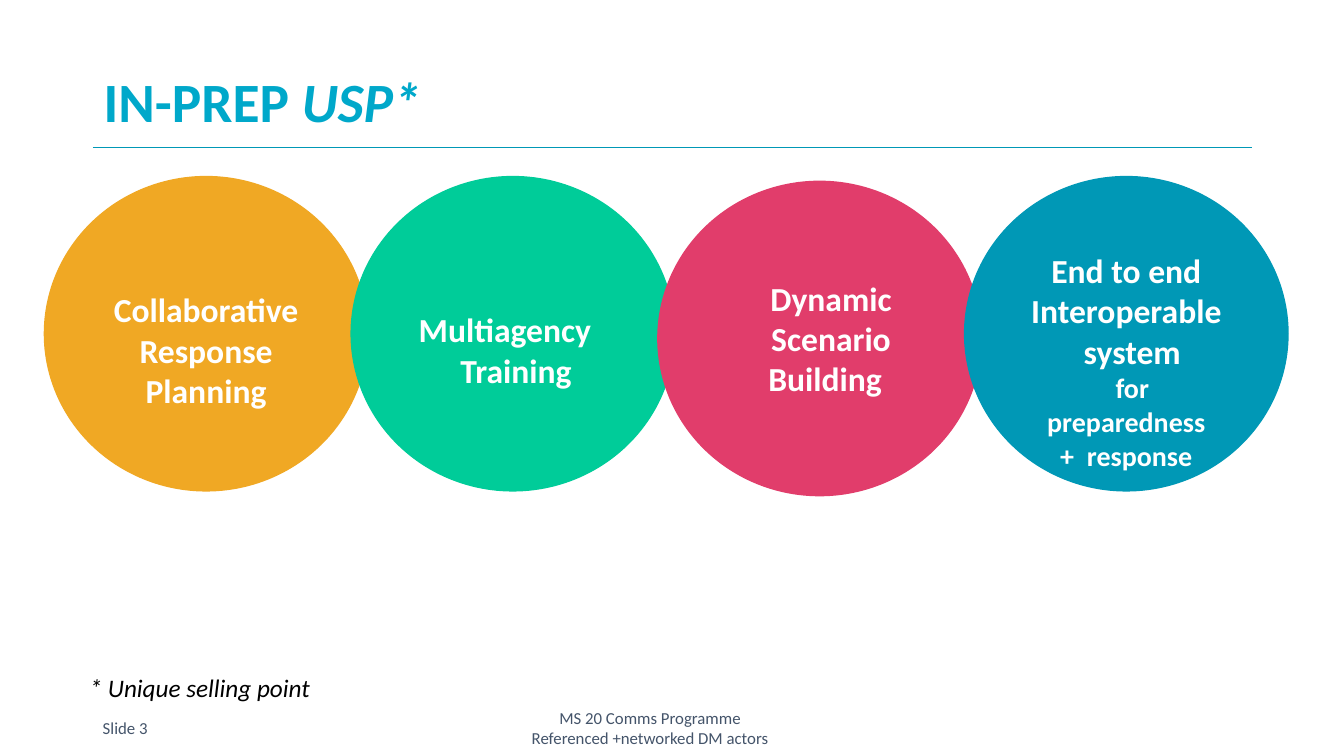
from dataclasses import dataclass

from lxml import etree
from pptx import Presentation
from pptx import util as u
from pptx.dml.color import RGBColor
from pptx.enum import shapes, text
from pptx.oxml.ns import qn


@dataclass(frozen=True)
class Theme:
    font: str = "Calibri"
    title: str = "00A8CA"
    rule: str = "0098B6"
    footer: str = "44546A"
    black: str = "000000"
    white: str = "FFFFFF"
    orange: str = "F0A824"
    green: str = "00CC99"
    pink: str = "E13D6B"
    title_size: float = 39.6
    circle_size: float = 24
    detail_size: float = 20
    note_size: float = 18
    footer_size: float = 12


T = Theme()


@dataclass(frozen=True)
class Line:
    words: str
    size: float = T.circle_size
    indent: float = 0


@dataclass(frozen=True)
class Circle:
    color: str
    lines: tuple[Line, ...]
    text_top: float
    top: float = 4.45
    left_inset: float = 0
    right_inset: float = 0


@dataclass(frozen=True)
class Label:
    lines: tuple[str, ...]
    left: float
    top: float
    width: float
    size: float = T.footer_size
    color: str = T.footer
    align: text.PP_ALIGN = text.PP_ALIGN.LEFT
    italic: bool = False
    wrap: bool = True


CIRCLE_LEFT, CIRCLE_PITCH = 1.12, 7.73
CIRCLE_WIDTH, CIRCLE_HEIGHT = 8.15, 7.92
LABEL_HEIGHT = 1.02

CIRCLES = (
    Circle(T.orange, (Line("Collaborative Response Planning"),), 1.68),
    Circle(T.green, (Line("Multiagency"), Line("Training", indent=0.56)), 2.18,
           right_inset=0.4),
    Circle(T.pink, (Line("Dynamic", indent=0.3), Line("Scenario", indent=0.3),
                    Line("Building")), 1.27, top=4.57, left_inset=0.28),
    Circle(T.rule, (Line("End to end"), Line("Interoperable"),
                    Line("system", indent=0.3),
                    Line("for", T.detail_size, 0.3),
                    Line("preparedness", T.detail_size),
                    Line("+  response", T.detail_size)), 0.69),
)

LABELS = (
    Label(("MS 20 Comms Programme", "Referenced +networked DM actors"),
          10.67, 17.83, 11.43, align=text.PP_ALIGN.CENTER),
    Label(("Slide 3",), 2.34, 17.83, 2.03),
    Label(("* Unique selling point",), 2.01, 16.81, 6.35, T.note_size, T.black,
          italic=True, wrap=False),
)


def style(font, size: float, color: str, bold: bool = False,
          italic: bool = False) -> None:
    font.name = T.font
    font.size = u.Pt(size)
    font.bold = bold
    font.italic = italic
    font.color.rgb = RGBColor.from_string(color)


def add_title(s) -> None:
    sp = s.shapes.title
    sp.left, sp.top, sp.width, sp.height = map(u.Cm, (2.36, 1.88, 29.21, 1.78))
    tf = sp.text_frame
    tf.vertical_anchor = text.MSO_ANCHOR.TOP
    tf.margin_top = tf.margin_bottom = 0
    p = tf.paragraphs[0]
    p.alignment = text.PP_ALIGN.LEFT
    p.line_spacing = 0.9
    for words, italic in (("IN-PREP ", False), ("USP*", True)):
        r = p.add_run()
        r.text = words
        style(r.font, T.title_size, T.title, True, italic)


def add_rule(s) -> None:
    line = s.shapes.add_connector(shapes.MSO_CONNECTOR.STRAIGHT, u.Cm(2.34),
                                  u.Cm(3.71), u.Cm(31.55), u.Cm(3.71))
    line.line.color.rgb = RGBColor.from_string(T.rule)
    line.line.width = u.Pt(1)
    etree.SubElement(line._element.spPr, qn("a:effectLst"))


def add_circle(s, index: int, circle: Circle) -> None:
    sp = s.shapes.add_shape(
        shapes.MSO_SHAPE.OVAL, u.Cm(CIRCLE_LEFT + index * CIRCLE_PITCH),
        u.Cm(circle.top), u.Cm(CIRCLE_WIDTH), u.Cm(CIRCLE_HEIGHT))
    sp.shadow.inherit = False
    sp.fill.solid()
    sp.fill.fore_color.rgb = RGBColor.from_string(circle.color)
    sp.line.color.rgb = RGBColor.from_string(circle.color)
    sp.line.width = u.Pt(1)
    tf = sp.text_frame
    tf.word_wrap = True
    tf.vertical_anchor = text.MSO_ANCHOR.TOP
    tf.margin_left = u.Cm(circle.left_inset)
    tf.margin_right = u.Cm(circle.right_inset)
    tf.margin_top = u.Cm(circle.text_top)
    tf.margin_bottom = 0
    tf.text = "\n".join(line.words for line in circle.lines)
    for p, line in zip(tf.paragraphs, circle.lines):
        p.alignment = text.PP_ALIGN.CENTER
        p._p.get_or_add_pPr().set("marL", str(u.Cm(line.indent)))
        style(p.runs[0].font, line.size, T.white, bold=True)


def add_label(s, label: Label) -> None:
    sp = s.shapes.add_textbox(u.Cm(label.left), u.Cm(label.top),
                              u.Cm(label.width), u.Cm(LABEL_HEIGHT))
    tf = sp.text_frame
    tf.word_wrap = label.wrap
    tf.vertical_anchor = text.MSO_ANCHOR.MIDDLE
    tf.text = "\n".join(label.lines)
    for p in tf.paragraphs:
        p.alignment = label.align
        style(p.runs[0].font, label.size, label.color, italic=label.italic)


def main() -> None:
    prs = Presentation()
    prs.slide_width, prs.slide_height = u.Cm(33.87), u.Cm(19.05)
    s = prs.slides.add_slide(prs.slide_layouts[5])
    add_rule(s)
    add_title(s)
    for index, circle in enumerate(CIRCLES):
        add_circle(s, index, circle)
    for label in LABELS:
        add_label(s, label)
    prs.save("out.pptx")


if __name__ == "__main__":
    main()
